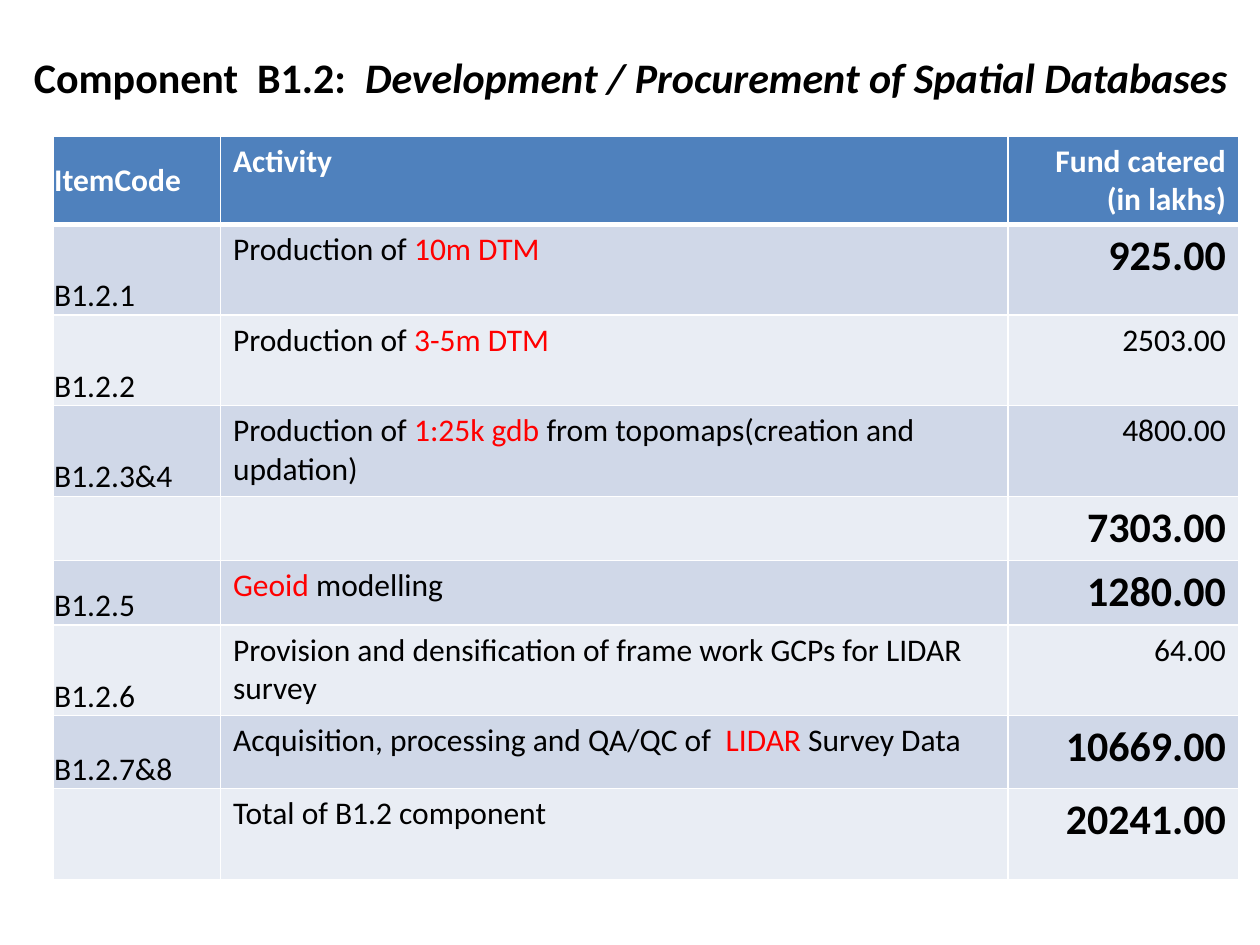
import pptx
import pptx.util
import pptx.dml.color
import pptx.enum.text
import pptx.oxml.ns
import lxml.etree

Inches, Pt = pptx.util.Inches, pptx.util.Pt
RGB = pptx.dml.color.RGBColor.from_string
Align, Anchor = pptx.enum.text.PP_ALIGN, pptx.enum.text.MSO_ANCHOR
qn = pptx.oxml.ns.qn

theme = {
    "font": "Calibri", "body": 18, "big": 24,
    "ink": "000000", "mark": "FF0000", "line": "FFFFFF",
    "head": "4F81BD", "bands": ["D0D8E8", "E9EDF4"],
}


def add_run(para, text, color, **style):
    run = para.add_run()
    run.text = text
    run.font.color.rgb = RGB(color)
    for name, value in {"name": theme["font"], **style}.items():
        setattr(run.font, name, value)


def add_lines(cell, bottom):
    """Rule all four edges of the cell; bottom is the lower width in points."""
    props = cell._tc.get_or_add_tcPr()
    for side, width in (("L", 1), ("R", 1), ("T", 1), ("B", bottom)):
        line = lxml.etree.SubElement(props, qn(f"a:ln{side}"), w=str(Pt(width)))
        fill = lxml.etree.SubElement(line, qn("a:solidFill"))
        lxml.etree.SubElement(fill, qn("a:srgbClr"), val=theme["line"])


# Bars enclose the red part of an activity; the last item tells a big bold fund.
rows = [
    (0.69, "ItemCode", "Activity", "Fund catered\n(in lakhs)", False),
    (0.72, "B1.2.1", "Production of |10m DTM", "925.00", True),
    (0.72, "B1.2.2", "Production of |3-5m DTM", "2503.00", False),
    (0.72, "B1.2.3&4",
     "Production of |1:25k gdb |from topomaps(creation and updation)",
     "4800.00", False),
    (0.51, "", "", "7303.00", True),
    (0.51, "B1.2.5", "|Geoid |modelling", "1280.00", True),
    (0.72, "B1.2.6",
     "Provision and densification of frame work GCPs for LIDAR survey",
     "64.00", False),
    (0.58, "B1.2.7&8",
     "Acquisition, processing and QA/QC of  |LIDAR |Survey Data",
     "10669.00", True),
    (0.72, "", "Total of B1.2 component", "20241.00", True),
]
widths = [1.33, 6.25, 1.83]

deck = pptx.Presentation()
deck.slide_width, deck.slide_height = Inches(10), Inches(7.5)
slide = deck.slides.add_slide(deck.slide_layouts[6])

# Title
box = slide.shapes.add_textbox(Inches(0.17), Inches(0.3), Inches(9.83), Inches(0.62))
frame = box.text_frame
frame.word_wrap = True
frame.vertical_anchor = Anchor.MIDDLE
for text, slant in (("Component  B1.2:  ", False),
                    ("Development / Procurement of Spatial Databases", True)):
    add_run(frame.paragraphs[0], text, theme["ink"],
            size=Pt(theme["big"]), bold=True, italic=slant)

# Fund table
height = sum(row[0] for row in rows)
table = slide.shapes.add_table(
    len(rows), len(widths), Inches(0.42), Inches(1.08),
    Inches(sum(widths)), Inches(height)).table
for col, width in zip(table.columns, widths):
    col.width = Inches(width)

tight = {"margin_left": Inches(0.01), "margin_right": Inches(0.01),
         "margin_top": Inches(0.01), "margin_bottom": 0}

for r, (tall, *texts, strong) in enumerate(rows):
    table.rows[r].height = Inches(tall)
    head = r == 0
    for c, text in enumerate(texts):
        cell = table.cell(r, c)
        add_lines(cell, 3 if head else 1)
        cell.fill.solid()
        cell.fill.fore_color.rgb = RGB(
            theme["head"] if head else theme["bands"][(r - 1) % 2])
        if c == 0 and text:
            look = {**tight, "vertical_anchor": Anchor.MIDDLE if head else Anchor.BOTTOM}
            for name, value in look.items():
                setattr(cell, name, value)
        big = strong and c == 2
        style = {"size": Pt(theme["big" if big else "body"]), "bold": head or big}
        for n, line in enumerate(text.split("\n")):
            para = cell.text_frame.add_paragraph() if n else cell.text_frame.paragraphs[0]
            para.alignment = Align.RIGHT if c == 2 else Align.LEFT
            for k, part in enumerate(line.split("|")):
                color = theme["line"] if head else theme["mark" if k % 2 else "ink"]
                if part:
                    add_run(para, part, color, **style)

deck.save("out.pptx")
